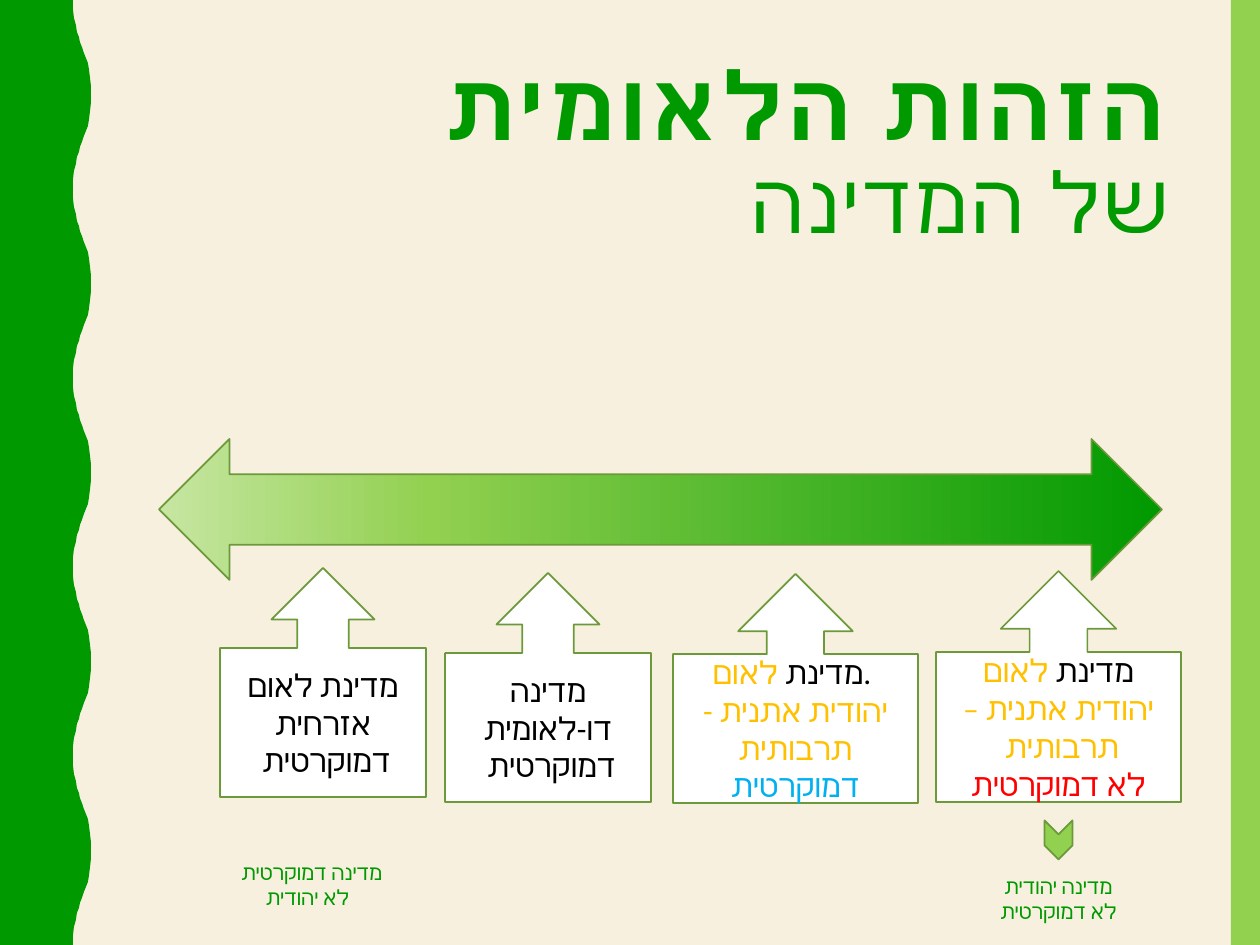
from collections import namedtuple
from dataclasses import dataclass

from lxml.etree import SubElement
from pptx import Presentation
from pptx.dml.color import RGBColor
from pptx.enum.shapes import MSO_SHAPE as Preset
from pptx.enum.text import MSO_ANCHOR as Anchor, PP_ALIGN as Align
from pptx.oxml.ns import qn
from pptx.util import Pt

EMU_PER_PX = 914400 / 126
SLIDE_WIDTH, SLIDE_HEIGHT = 1260, 945

Box = namedtuple("Box", "left top width height")


@dataclass(frozen=True)
class Theme:
    background: str = "F7F0DF"
    green: str = "009900"
    lime: str = "92D050"
    pale: str = "C6E6A2"
    outline: str = "6C9A3B"
    white: str = "FFFFFF"
    ink: str = "000000"
    amber: str = "FFC000"
    blue: str = "00B0F0"
    red: str = "FF0000"
    heading_font: str = "Roboto Condensed"
    body_font: str = "Calibri"
    title_size: int = 54
    subtitle_size: int = 48
    callout_size: int = 18
    caption_size: int = 12


THEME = Theme()


def emu(px):
    return round(px * EMU_PER_PX)


def place(box):
    return [emu(length) for length in box]


def paint(fill, color):
    fill.solid()
    fill.fore_color.rgb = RGBColor.from_string(color)


def style_run(run, font, size, color, bold=False):
    run.font.name = font
    run.font.size = Pt(size)
    run.font.bold = bold
    run.font.color.rgb = RGBColor.from_string(color)
    # Hebrew takes its typeface from the complex-script slot.
    SubElement(run.font._element, qn("a:cs")).set("typeface", font)


def set_rtl(paragraph, alignment):
    paragraph.alignment = alignment
    paragraph._p.get_or_add_pPr().set("rtl", "1")


def add_preset(slide, preset, box, color, outline=None):
    shape = slide.shapes.add_shape(preset, *place(box))
    shape.shadow.inherit = False
    paint(shape.fill, color)
    if outline:
        paint(shape.line.fill, outline)
        shape.line.width = Pt(1)
    else:
        shape.line.fill.background()
    return shape


def add_text_box(slide, box):
    text_frame = slide.shapes.add_textbox(*place(box)).text_frame
    text_frame.word_wrap = True
    return text_frame


def add_wavy_edge(slide, box, waves):
    """Fill the box with a band whose right edge swells once per wave."""
    half_wave = [(0, 0), (9, 0), (18, 1), (25, 3), (32, 4), (37, 6), (42, 7), (47, 9),
                 (53, 11), (58, 13), (63, 15), (69, 16), (77, 17), (86, 18), (94, 18)]
    period = box.height / waves
    wave = half_wave + [(period - y, x) for y, x in reversed(half_wave[1:])]
    trough = box.left + box.width - 18
    bottom = box.top + box.height
    points = [(trough + x, box.top + period * index + y)
              for index in range(waves) for y, x in wave]
    points += [(trough, bottom), (box.left, bottom)]
    builder = slide.shapes.build_freeform(emu(box.left), emu(box.top))
    builder.add_line_segments([(emu(x), emu(y)) for x, y in points], close=True)
    shape = builder.convert_to_shape()
    shape.shadow.inherit = False
    paint(shape.fill, THEME.green)
    shape.line.fill.background()


def add_title(slide, box):
    paragraph = add_text_box(slide, box).paragraphs[0]
    paragraph.text = "הזהות הלאומית \nשל המדינה"
    paragraph.line_spacing = 0.9
    set_rtl(paragraph, Align.RIGHT)
    styles = [(THEME.title_size, True), (THEME.subtitle_size, False)]
    for run, (size, bold) in zip(paragraph.runs, styles):
        style_run(run, THEME.heading_font, size, THEME.green, bold)
        run.font._element.set("spc", "200")


def add_spectrum_arrow(slide, box):
    shape = add_preset(slide, Preset.LEFT_RIGHT_ARROW, box, THEME.green, THEME.outline)
    shape.fill.gradient()
    shape.fill.gradient_angle = 180
    stop_list = shape._element.spPr.find(".//" + qn("a:gsLst"))
    stop_list.clear()
    for percent, color in [(0, THEME.green), (73, THEME.lime), (100, THEME.pale)]:
        stop = SubElement(stop_list, qn("a:gs"), pos=str(percent * 1000))
        SubElement(stop, qn("a:srgbClr"), val=color)


def add_callout(slide, box, paragraphs):
    """Add an up-arrow callout; each paragraph is a list of (text, color)."""
    shape = add_preset(slide, Preset.UP_ARROW_CALLOUT, box, THEME.white, THEME.outline)
    text_frame = shape.text_frame
    text_frame.word_wrap = True
    text_frame.vertical_anchor = Anchor.MIDDLE
    for index, pieces in enumerate(paragraphs):
        paragraph = text_frame.add_paragraph() if index else text_frame.paragraphs[0]
        set_rtl(paragraph, Align.CENTER)
        for text, color in pieces:
            run = paragraph.add_run()
            run.text = text
            style_run(run, THEME.body_font, THEME.callout_size, color)


def add_caption(slide, box, lines, first_alignment):
    text_frame = add_text_box(slide, box)
    text_frame.text = "\n".join(lines)
    for paragraph, alignment in zip(text_frame.paragraphs, [first_alignment, Align.CENTER]):
        set_rtl(paragraph, alignment)
        style_run(paragraph.runs[0], THEME.body_font, THEME.caption_size, THEME.green)


def add_chevron_down(slide, box):
    shape = add_preset(slide, Preset.CHEVRON, box, THEME.lime, THEME.outline)
    shape.rotation = 90


def build_identity_slide(slide):
    paint(slide.background.fill, THEME.background)
    add_wavy_edge(slide, Box(0, 0, 91, SLIDE_HEIGHT), waves=5)
    add_preset(slide, Preset.RECTANGLE, Box(1231, 0, 29, SLIDE_HEIGHT), THEME.lime)
    add_title(slide, Box(130, 53, 1052, 205))
    add_spectrum_arrow(slide, Box(159, 439, 1003, 141))

    callouts = [
        (Box(220, 568, 206, 229), [[("מדינת לאום אזרחית דמוקרטית ", THEME.ink)]]),
        (Box(445, 573, 206, 229), [[("מדינה דו-לאומית דמוקרטית ", THEME.ink)]]),
        (Box(673, 574, 245, 229), [[(" .מדינת ", THEME.ink),
                                    ("לאום יהודית אתנית -תרבותית ", THEME.amber),
                                    ("דמוקרטית", THEME.blue)]]),
        (Box(936, 571, 245, 231), [[("מדינת ", THEME.ink),
                                    ("לאום יהודית אתנית – תרבותית ", THEME.amber)],
                                   [("לא דמוקרטית", THEME.red)]]),
    ]
    for box, paragraphs in callouts:
        add_callout(slide, box, paragraphs)

    add_chevron_down(slide, Box(1039, 826, 39, 28))
    add_caption(slide, Box(971, 867, 175, 63), ["מדינה יהודית", "לא דמוקרטית"], Align.CENTER)
    add_caption(slide, Box(220, 853, 175, 63), ["מדינה דמוקרטית", "לא יהודית"], Align.RIGHT)


def main():
    presentation = Presentation()
    presentation.slide_width = emu(SLIDE_WIDTH)
    presentation.slide_height = emu(SLIDE_HEIGHT)
    build_identity_slide(presentation.slides.add_slide(presentation.slide_layouts[6]))
    presentation.save("out.pptx")


if __name__ == "__main__":
    main()
